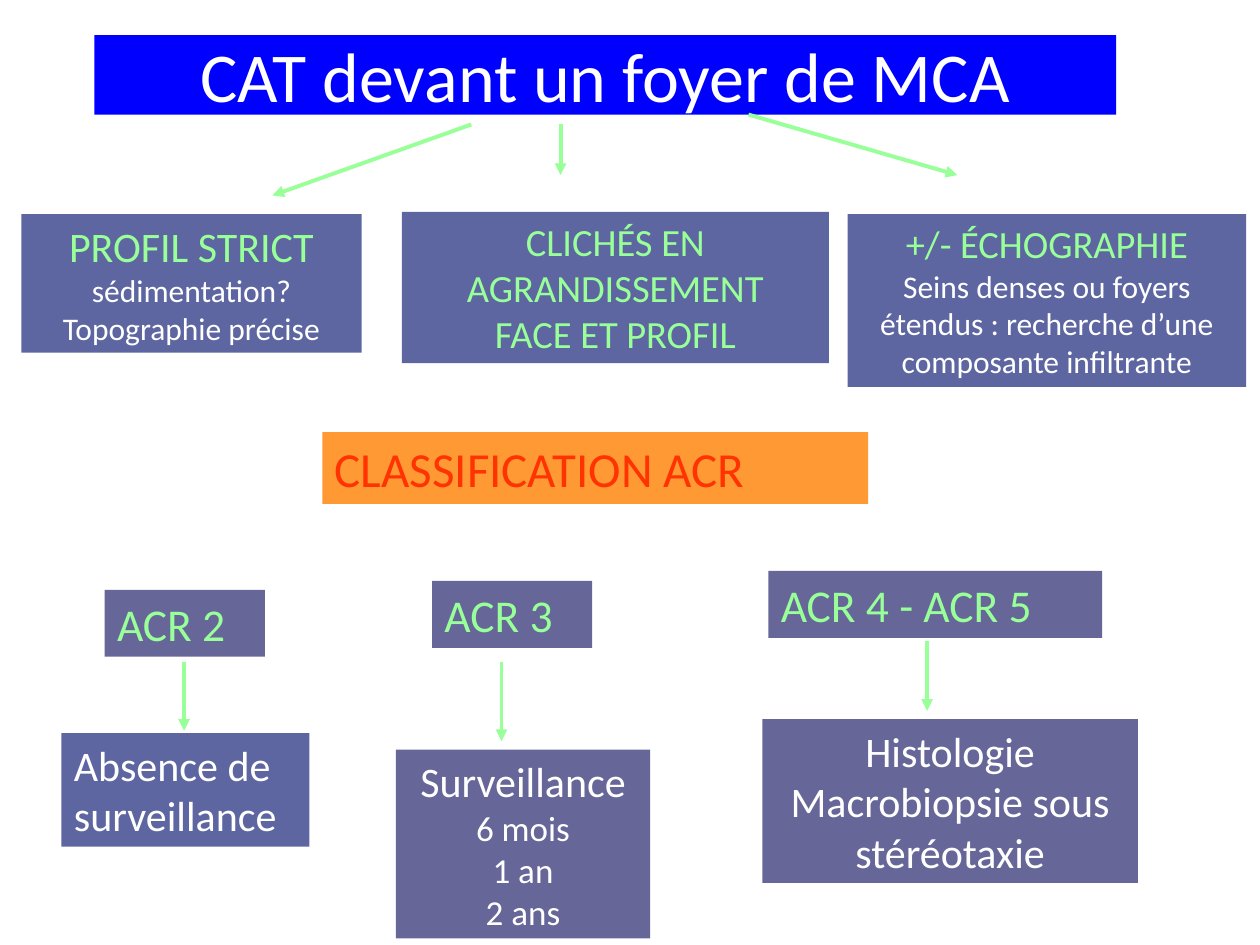
from dataclasses import dataclass

import lxml.etree
import pptx
import pptx.dml.color
import pptx.enum.shapes
import pptx.enum.text
import pptx.oxml.ns
import pptx.util

Cm, Pt = pptx.util.Cm, pptx.util.Pt
RGB = pptx.dml.color.RGBColor.from_string
Align = pptx.enum.text.PP_ALIGN
Anchor = pptx.enum.text.MSO_ANCHOR
qn = pptx.oxml.ns.qn


@dataclass(frozen=True)
class Theme:
    font: str = "Calibri"
    white: str = "FFFFFF"
    blue: str = "0000FF"
    slate: str = "5E66A2"
    plum: str = "666699"
    green: str = "99FF99"
    amber: str = "FF9933"
    red: str = "FF3300"
    title: int = 40
    band: int = 28
    grade: int = 26
    head: int = 24
    step: int = 22
    term: int = 20
    note: int = 18
    line: float = 2.25


T = Theme()


@dataclass(frozen=True)
class Line:
    text: str
    size: int
    color: str = T.white


@dataclass(frozen=True)
class Box:
    """A filled box; its place is left, top, width, height in cm."""
    place: tuple[float, float, float, float]
    fill: str
    lines: list[Line]
    align: Align = Align.CENTER


@dataclass(frozen=True)
class Arrow:
    start: tuple[float, float]
    end: tuple[float, float]


TITLE = Box((1.9, 0.71, 20.6, 1.6), T.blue,
            [Line("CAT devant un foyer de MCA", T.title)])


def grade(text: str, left: float, top: float, width: float = 3.23) -> Box:
    return Box((left, top, width, 1.35), T.plum,
               [Line(text, T.grade, T.green)], Align.LEFT)


BOXES = [
    Box((0.43, 4.32, 6.86, 2.79), T.slate, [
        Line("PROFIL STRICT", T.head, T.green),
        Line("sédimentation?", T.note),
        Line("Topographie précise", T.note)]),
    Box((8.1, 4.27, 8.61, 3.05), T.slate, [
        Line("CLICHÉS EN AGRANDISSEMENT", T.step, T.green),
        Line("FACE ET PROFIL", T.step, T.green)]),
    Box((17.09, 4.32, 8.03, 3.48), T.slate, [
        Line("+/- ÉCHOGRAPHIE", T.step, T.green),
        Line("Seins denses ou foyers", T.note),
        Line("étendus : recherche d’une", T.note),
        Line("composante infiltrante", T.note)]),
    Box((6.5, 8.71, 11, 1.45), T.amber,
        [Line("CLASSIFICATION ACR", T.band, T.red)], Align.LEFT),
    grade("ACR 2", 2.11, 11.89),
    grade("ACR 3", 8.71, 11.71),
    grade("ACR 4 - ACR 5", 15.49, 11.51, 6.73),
    Box((1.24, 14.78, 5, 2.29), T.slate, [
        Line("Absence de", T.head),
        Line("surveillance", T.head)], Align.LEFT),
    Box((7.98, 15.11, 5.13, 3.81), T.plum, [
        Line("Surveillance", T.head),
        Line("6 mois", T.term),
        Line("1 an", T.term),
        Line("2 ans", T.term)]),
    Box((15.37, 14.5, 7.57, 3.3), T.plum, [
        Line("Histologie", T.head),
        Line("Macrobiopsie sous", T.head),
        Line("stéréotaxie", T.head)]),
]

ARROWS = [
    Arrow((9.5, 2.51), (5.49, 3.94)),
    Arrow((11.3, 2.51), (11.3, 3.53)),
    Arrow((15.09, 2.31), (19.3, 3.53)),
    Arrow((3.71, 13.34), (3.71, 14.73)),
    Arrow((10.11, 13.34), (10.11, 14.94)),
    Arrow((18.69, 12.93), (18.69, 14.33)),
]


def dress(shape, box: Box, anchor: Anchor) -> None:
    """Give a shape the fill and the text of a box."""
    shape.fill.solid()
    shape.fill.fore_color.rgb = RGB(box.fill)
    frame = shape.text_frame
    frame.word_wrap = True
    frame.auto_size = pptx.enum.text.MSO_AUTO_SIZE.NONE
    frame.vertical_anchor = anchor
    for i, line in enumerate(box.lines):
        para = frame.add_paragraph() if i else frame.paragraphs[0]
        para.alignment = box.align
        run = para.add_run()
        run.text = line.text
        run.font.name = T.font
        run.font.size = Pt(line.size)
        run.font.color.rgb = RGB(line.color)


def add_title(slide, box: Box) -> None:
    shape = slide.shapes.title
    shape.left, shape.top, shape.width, shape.height = map(Cm, box.place)
    dress(shape, box, Anchor.MIDDLE)


def add_box(slide, box: Box) -> None:
    kind = pptx.enum.shapes.MSO_SHAPE.RECTANGLE
    shape = slide.shapes.add_shape(kind, *map(Cm, box.place))
    shape.shadow.inherit = False
    shape.line.fill.background()
    dress(shape, box, Anchor.TOP)


def add_arrow(slide, arrow: Arrow) -> None:
    kind = pptx.enum.shapes.MSO_CONNECTOR.STRAIGHT
    link = slide.shapes.add_connector(kind, *map(Cm, arrow.start + arrow.end))
    link.line.color.rgb = RGB(T.green)
    link.line.width = Pt(T.line)
    tip = lxml.etree.SubElement(link.line._get_or_add_ln(), qn("a:tailEnd"))
    tip.set("type", "triangle")
    lxml.etree.SubElement(link._element.spPr, qn("a:effectLst"))


def main() -> None:
    deck = pptx.Presentation()
    deck.slide_width, deck.slide_height = Cm(25.4), Cm(19.05)
    slide = deck.slides.add_slide(deck.slide_layouts[5])
    add_title(slide, TITLE)
    for box in BOXES:
        add_box(slide, box)
    for arrow in ARROWS:
        add_arrow(slide, arrow)
    deck.save("out.pptx")


if __name__ == "__main__":
    main()
